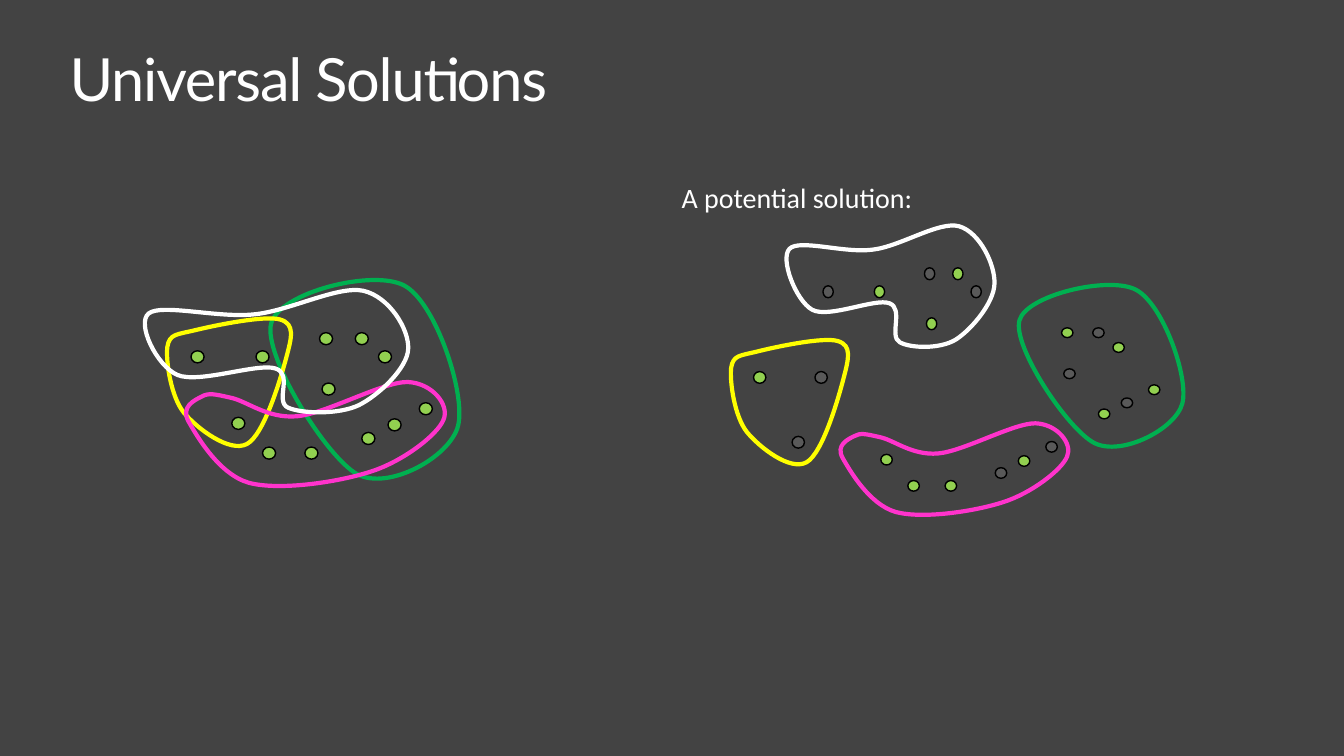
from pptx import Presentation
from pptx.dml.color import RGBColor
from pptx.enum.shapes import MSO_SHAPE
from pptx.enum.text import MSO_ANCHOR, MSO_AUTO_SIZE
from pptx.oxml.ns import qn
from pptx.util import Inches, Pt
from lxml.etree import SubElement

# Grid cells are one inch square
COLS, ROWS = 26.67, 15
W, H = Inches(COLS), Inches(ROWS)
DOT_W, DOT_H = 0.26, 0.24

COLORS = {
    "background": "434343", "text": "FFFFFF", "outline": "000000",
    "chosen": "92D050", "unchosen": "595959",
    "green": "00B050", "yellow": "FFFF00", "pink": "FF33CC", "white": "FFFFFF",
}

# Top left corner of each element in the universe
ELEMENTS = {
    "a": (3.79, 6.96), "b": (6.39, 7.6), "c": (4.6, 8.28), "d": (5.08, 6.96),
    "e": (6.05, 8.87), "f": (8.32, 7.99), "g": (7.51, 6.96), "h": (7.18, 8.58),
    "i": (6.34, 6.6), "j": (7.05, 6.6), "k": (7.7, 8.31), "l": (5.21, 8.87),
}

# Closed Bezier curves: a start point, then two controls and an end per segment
CURVES = {
    "green": [
        (7.09, 9.41),
        (6.47, 9.07), (5.22, 7.05), (5.38, 6.42),
        (5.54, 5.8), (7.42, 5.33), (8.03, 5.67),
        (8.65, 6.01), (9.25, 7.82), (9.09, 8.45),
        (8.93, 9.07), (7.71, 9.74), (7.09, 9.41)],
    "yellow": [
        (3.32, 6.89),
        (3.29, 7.17), (3.39, 7.87), (3.65, 8.19),
        (3.92, 8.51), (4.56, 8.99), (4.9, 8.81),
        (5.24, 8.63), (5.57, 7.51), (5.68, 7.1),
        (5.79, 6.69), (5.86, 6.43), (5.56, 6.34),
        (5.26, 6.25), (4.25, 6.46), (3.88, 6.55),
        (3.51, 6.64), (3.36, 6.62), (3.32, 6.89)],
    "pink": [
        (3.74, 8.36),
        (3.9, 8.64), (4.34, 9.41), (4.94, 9.58),
        (5.54, 9.74), (6.7, 9.57), (7.35, 9.36),
        (7.99, 9.16), (8.68, 8.63), (8.8, 8.33),
        (8.93, 8.04), (8.58, 7.6), (8.09, 7.58),
        (7.6, 7.57), (6.47, 8.21), (5.89, 8.26),
        (5.3, 8.31), (4.89, 7.95), (4.57, 7.89),
        (4.26, 7.82), (4.14, 7.79), (4, 7.87),
        (3.86, 7.94), (3.58, 8.07), (3.74, 8.36)],
    "white": [
        (2.95, 6.22),
        (2.7, 6.42), (3.11, 7.26), (3.52, 7.44),
        (3.94, 7.62), (5.1, 7.2), (5.46, 7.31),
        (5.83, 7.42), (5.44, 7.97), (5.72, 8.09),
        (5.99, 8.21), (6.72, 8.23), (7.12, 8.04),
        (7.52, 7.84), (8.09, 7.3), (8.1, 6.92),
        (8.12, 6.54), (7.73, 5.89), (7.21, 5.77),
        (6.7, 5.66), (5.73, 6.18), (5.02, 6.24),
        (4.31, 6.31), (3.2, 6.02), (2.95, 6.22)],
}

# Each set of the solution: box on the grid, chosen and unchosen members
SOLUTION = {
    "green": ((20.09, 5.47, 3.51, 3.59), "fghi", "bjk"),
    "pink": ((16.58, 8.39, 4.71, 1.91), "cekl", "fh"),
    "yellow": ((14.48, 6.68, 2.43, 2.67), "a", "cd"),
    "white": ((15.47, 4.38, 4.28, 2.55), "bdj", "agi"),
}


def col(n):
    return round(W * n / COLS)


def row(n):
    return round(H * n / ROWS)


def rgb(name):
    return RGBColor.from_string(COLORS[name])


def bounds(points):
    xs, ys = zip(*points)
    return min(xs), min(ys), max(xs) - min(xs), max(ys) - min(ys)


def add_text(slide, box, text, font, size, inset=None, spacing=None, tracking=None):
    x, y, w, h = box
    tf = slide.shapes.add_textbox(col(x), row(y), col(w), row(h)).text_frame
    tf.vertical_anchor = MSO_ANCHOR.TOP
    if inset is None:
        tf.word_wrap = False
        tf.auto_size = MSO_AUTO_SIZE.SHAPE_TO_FIT_TEXT
    else:
        tf.word_wrap = True
        tf.margin_left = tf.margin_right = col(inset)
        tf.margin_top = tf.margin_bottom = row(inset)
    p = tf.paragraphs[0]
    if spacing:
        p.line_spacing = spacing
    r = p.add_run()
    r.text = text
    r.font.name, r.font.size = font, Pt(size)
    r.font.color.rgb = rgb("text")
    if tracking:
        r.font._element.set("spc", str(round(tracking * 100)))


def bend(sp):
    """Turn each three straight segments into one cubic Bezier segment."""
    lines = list(sp._element.iter(qn("a:lnTo")))
    for triple in zip(*[iter(lines)] * 3):
        curve = SubElement(triple[0].getparent(), qn("a:cubicBezTo"))
        triple[0].addprevious(curve)
        for line in triple:
            curve.append(line[0])
            line.getparent().remove(line)


def add_curve(group, name, box):
    """Draw a set's outline, stretched from its own bounds to box."""
    x0, y0, w0, h0 = bounds(CURVES[name])
    x, y, w, h = box
    points = [(col(x + (px - x0) * w / w0), row(y + (py - y0) * h / h0))
              for px, py in CURVES[name]]
    builder = group.shapes.build_freeform(*points[0])
    builder.add_line_segments(points[1:], close=True)
    sp = builder.convert_to_shape()
    bend(sp)
    sp.shadow.inherit = False
    sp.fill.background()
    sp.line.color.rgb = rgb(name)
    sp.line.width = Pt(6)


def add_dots(group, members, color, old, new):
    """Draw elements, carried from the box old to the box new."""
    sx, sy = new[2] / old[2], new[3] / old[3]
    for member in members:
        x, y = ELEMENTS[member]
        sp = group.shapes.add_shape(
            MSO_SHAPE.OVAL,
            col(new[0] + (x - old[0]) * sx), row(new[1] + (y - old[1]) * sy),
            col(DOT_W * sx), row(DOT_H * sy))
        sp.shadow.inherit = False
        sp.fill.solid()
        sp.fill.fore_color.rgb = rgb(color)
        sp.line.color.rgb = rgb("outline")
        sp.line.width = Pt(2)


def add_universe(slide):
    group = slide.shapes.add_group_shape()
    for name, points in CURVES.items():
        add_curve(group, name, bounds(points))
    whole = (0, 0, COLS, ROWS)
    add_dots(group, ELEMENTS, "chosen", whole, whole)


def add_solution(slide):
    for name, (box, chosen, unchosen) in SOLUTION.items():
        group = slide.shapes.add_group_shape()
        old = bounds(CURVES[name])
        add_curve(group, name, box)
        add_dots(group, chosen, "chosen", old, box)
        add_dots(group, unchosen, "unchosen", old, box)


def main():
    prs = Presentation()
    prs.slide_width, prs.slide_height = W, H
    slide = prs.slides.add_slide(prs.slide_layouts[6])
    slide.background.fill.solid()
    slide.background.fill.fore_color.rgb = rgb("background")
    add_text(slide, (1.32, 1.04, 24.03, 1.57), "Universal Solutions", "Lato", 85,
             inset=0.06, spacing=0.8, tracking=-1.7)
    add_text(slide, (13.43, 3.54, 4.83, 0.77), "A potential solution:", "Calibri", 40)
    add_universe(slide)
    add_solution(slide)
    prs.save("out.pptx")


if __name__ == "__main__":
    main()
